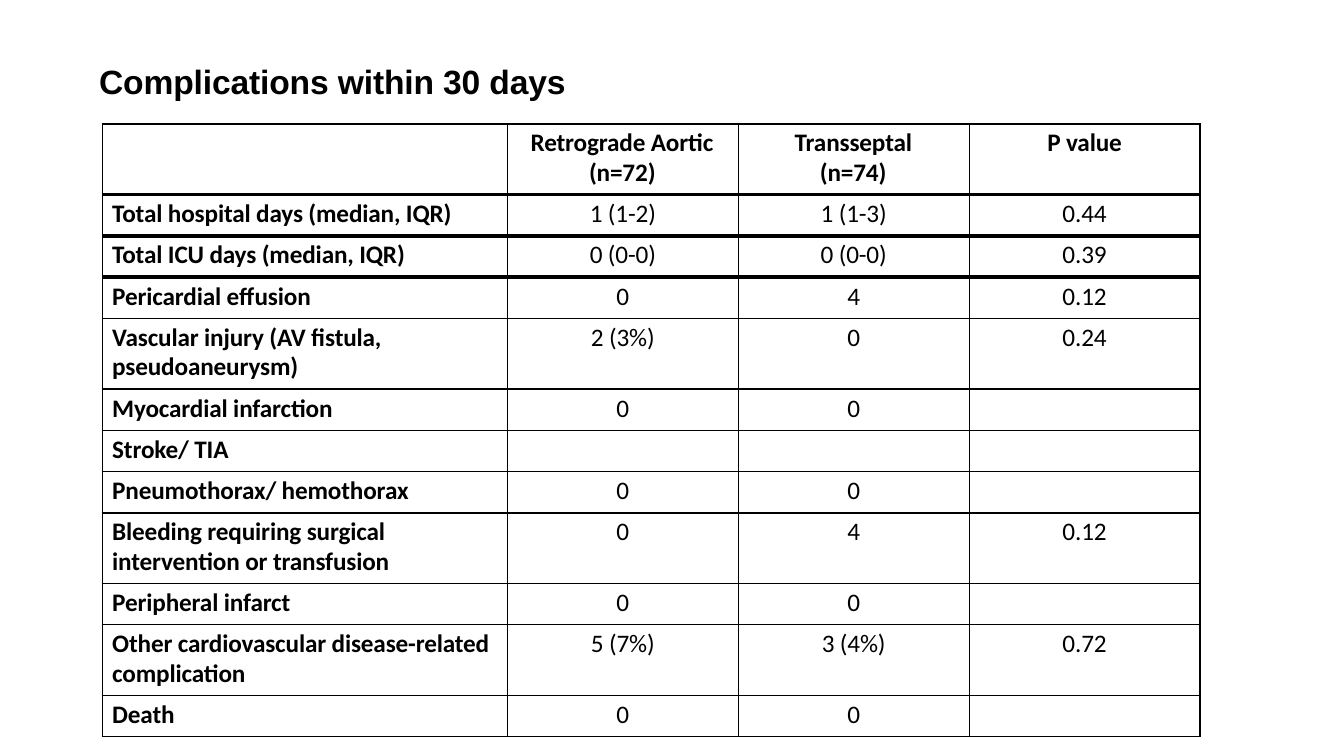
from lxml import etree
from pptx import Presentation, util as u
from pptx.dml.color import RGBColor
from pptx.enum import text
from pptx.oxml import ns

WIDTH, HEIGHT = 13.33, 7.5
BLACK = "000000"
COLUMNS = [4.02, 2.29, 2.29, 2.29]
SINGLE, DOUBLE = 0.41, 0.7
THIN, THICK = 1, 3
THICK_RULES = 3
HEADER_INDENTS = {1: (0.81, -0.58), 2: (0.81, -0.25)}

ROWS = [
    ["", "Retrograde Aortic (n=72)", "Transseptal (n=74)", "P value"],
    ["Total hospital days (median, IQR)", "1 (1-2)", "1 (1-3)", "0.44"],
    ["Total ICU days (median, IQR)", "0 (0-0)", "0 (0-0)", "0.39"],
    ["Pericardial effusion", "0", "4", "0.12"],
    ["Vascular injury (AV fistula, pseudoaneurysm)", "2 (3%)", "0", "0.24"],
    ["Myocardial infarction", "0", "0", ""],
    ["Stroke/ TIA", "", "", ""],
    ["Pneumothorax/ hemothorax", "0", "0", ""],
    ["Bleeding requiring surgical intervention or transfusion", "0", "4", "0.12"],
    ["Peripheral infarct", "0", "0", ""],
    ["Other cardiovascular disease-related complication", "5 (7%)", "3 (4%)", "0.72"],
    ["Death", "0", "0", ""],
]
TALL_ROWS = {0, 4, 8, 10}


def color(value):
    return RGBColor.from_string(value)


def style_text(para, font, size, bold):
    para.font.size = u.Pt(size)
    for span in para.runs:
        span.font.name = font
        span.font.size = u.Pt(size)
        span.font.bold = bold
        span.font.color.rgb = color(BLACK)
        span.font._element.set("spc", "-10")


def indent(para, left, first=0, right=0):
    properties = para._p.get_or_add_pPr()
    for name, value in (("marL", left), ("indent", first), ("marR", right)):
        properties.set(name, str(int(u.Inches(value))))


def add_border(cell, side, width):
    line = etree.SubElement(cell._tc.get_or_add_tcPr(), ns.qn(f"a:ln{side}"))
    line.set("w", str(int(u.Pt(width))))
    fill = etree.SubElement(line, ns.qn("a:solidFill"))
    etree.SubElement(fill, ns.qn("a:srgbClr")).set("val", BLACK)


def rule_width(index):
    return THICK if 1 <= index <= THICK_RULES else THIN


def fill_cell(cell, wording, row, column):
    wrapped = row in TALL_ROWS and (column == 0 or (row, column) in ((0, 1), (0, 2)))
    cell.margin_left = cell.margin_right = cell.margin_bottom = 0
    cell.margin_top = u.Inches(0.05 if wrapped else 0.04)
    cell.text_frame.text = wording
    para = cell.text_frame.paragraphs[0]
    style_text(para, "Calibri", 18, row == 0 or column == 0)
    para.space_before = u.Pt(3.7 if wrapped else 2.5)
    if wrapped:
        para.line_spacing = u.Pt(21.1)
    if column == 0:
        indent(para, 0.1, right=0.1)
    elif row == 0 and column in HEADER_INDENTS:
        indent(para, *HEADER_INDENTS[column])
    else:
        para.alignment = text.PP_ALIGN.CENTER
    widths = {"L": THIN, "R": THIN, "T": rule_width(row), "B": rule_width(row + 1)}
    for side, width in widths.items():
        add_border(cell, side, width)
    cell.fill.background()


def add_title(page, wording):
    box = page.shapes.add_textbox(
        u.Inches(0.073 * WIDTH), u.Inches(0.079 * HEIGHT),
        u.Inches(0.352 * WIDTH), u.Inches(0.057 * HEIGHT))
    frame = box.text_frame
    frame.word_wrap = True
    frame.margin_left = frame.margin_right = frame.margin_bottom = 0
    frame.margin_top = u.Inches(0.01)
    frame.text = wording
    para = frame.paragraphs[0]
    para.space_before = u.Pt(1)
    indent(para, 0.01)
    style_text(para, "Arial", 24, True)


def add_complications_table(page):
    heights = [DOUBLE if row in TALL_ROWS else SINGLE for row in range(len(ROWS))]
    table = page.shapes.add_table(
        len(ROWS), len(COLUMNS), u.Inches(0.076 * WIDTH), u.Inches(0.164 * HEIGHT),
        u.Inches(sum(COLUMNS)), u.Inches(sum(heights))).table
    table.first_row = table.horz_banding = False
    for column, width in zip(table.columns, COLUMNS):
        column.width = u.Inches(width)
    for row, height in zip(table.rows, heights):
        row.height = u.Inches(height)
    for row, wordings in enumerate(ROWS):
        for column, wording in enumerate(wordings):
            fill_cell(table.cell(row, column), wording, row, column)


def main():
    deck = Presentation()
    deck.slide_width = u.Inches(WIDTH)
    deck.slide_height = u.Inches(HEIGHT)
    page = deck.slides.add_slide(deck.slide_layouts[6])
    add_complications_table(page)
    add_title(page, "Complications within 30 days")
    deck.save("out.pptx")


if __name__ == "__main__":
    main()
